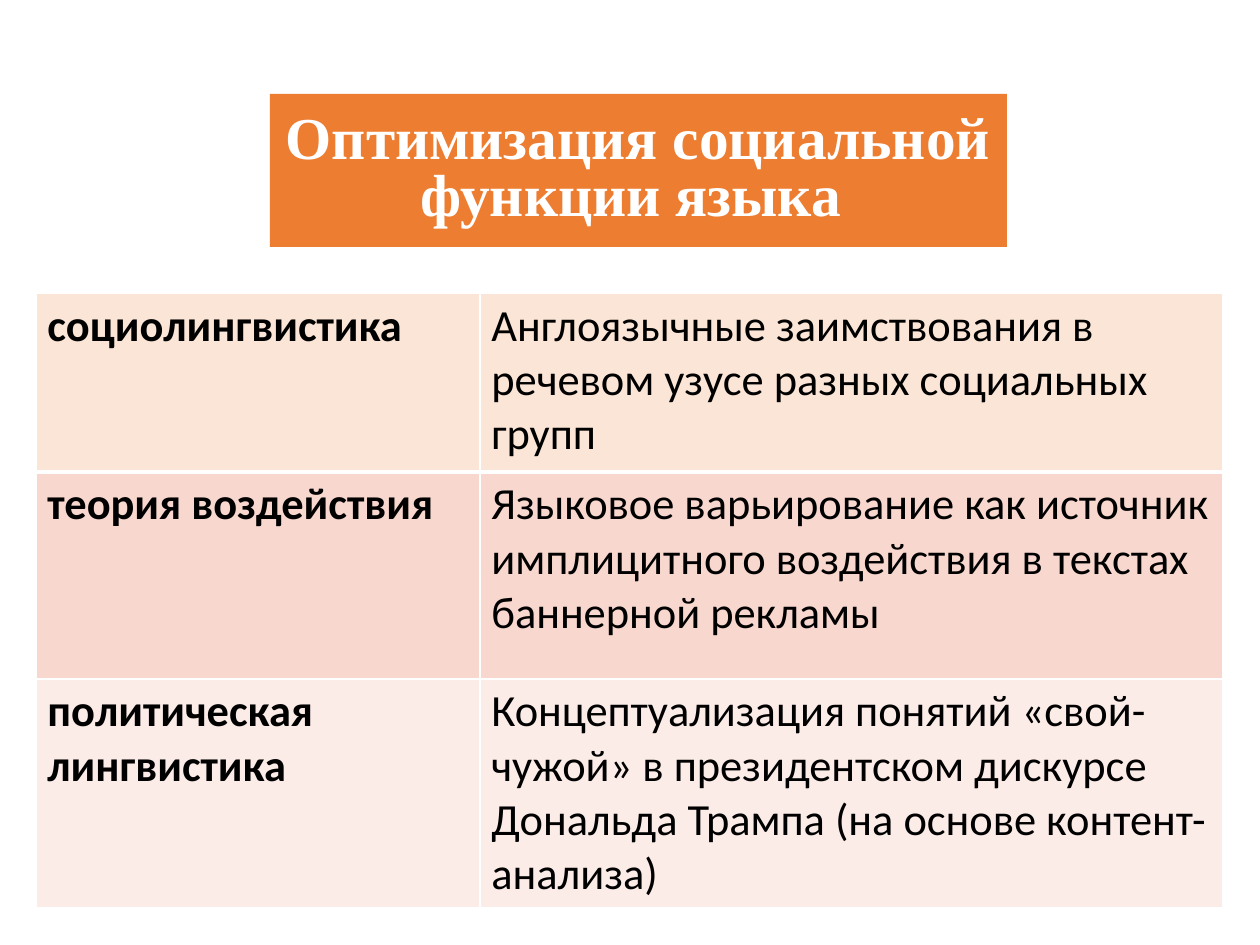
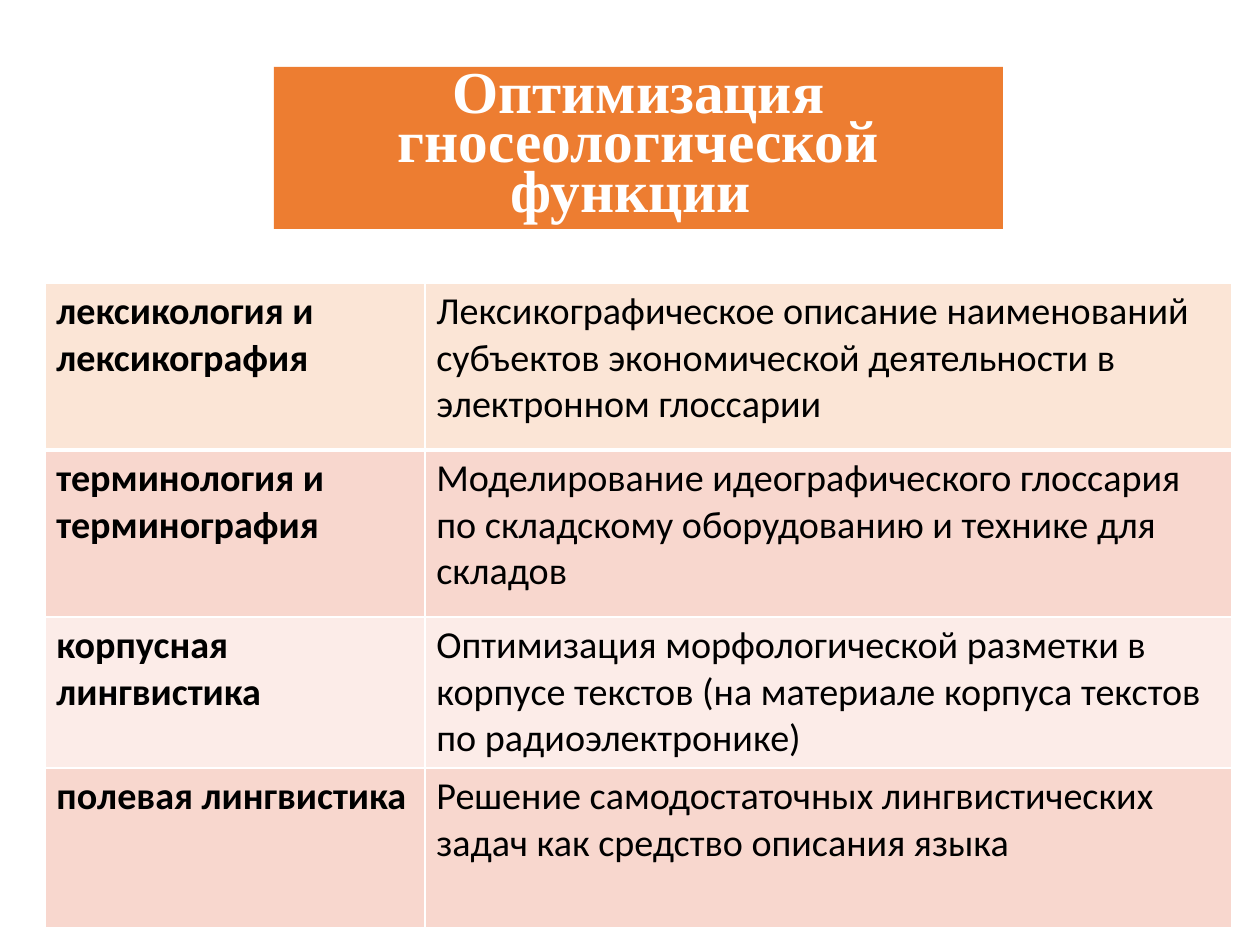
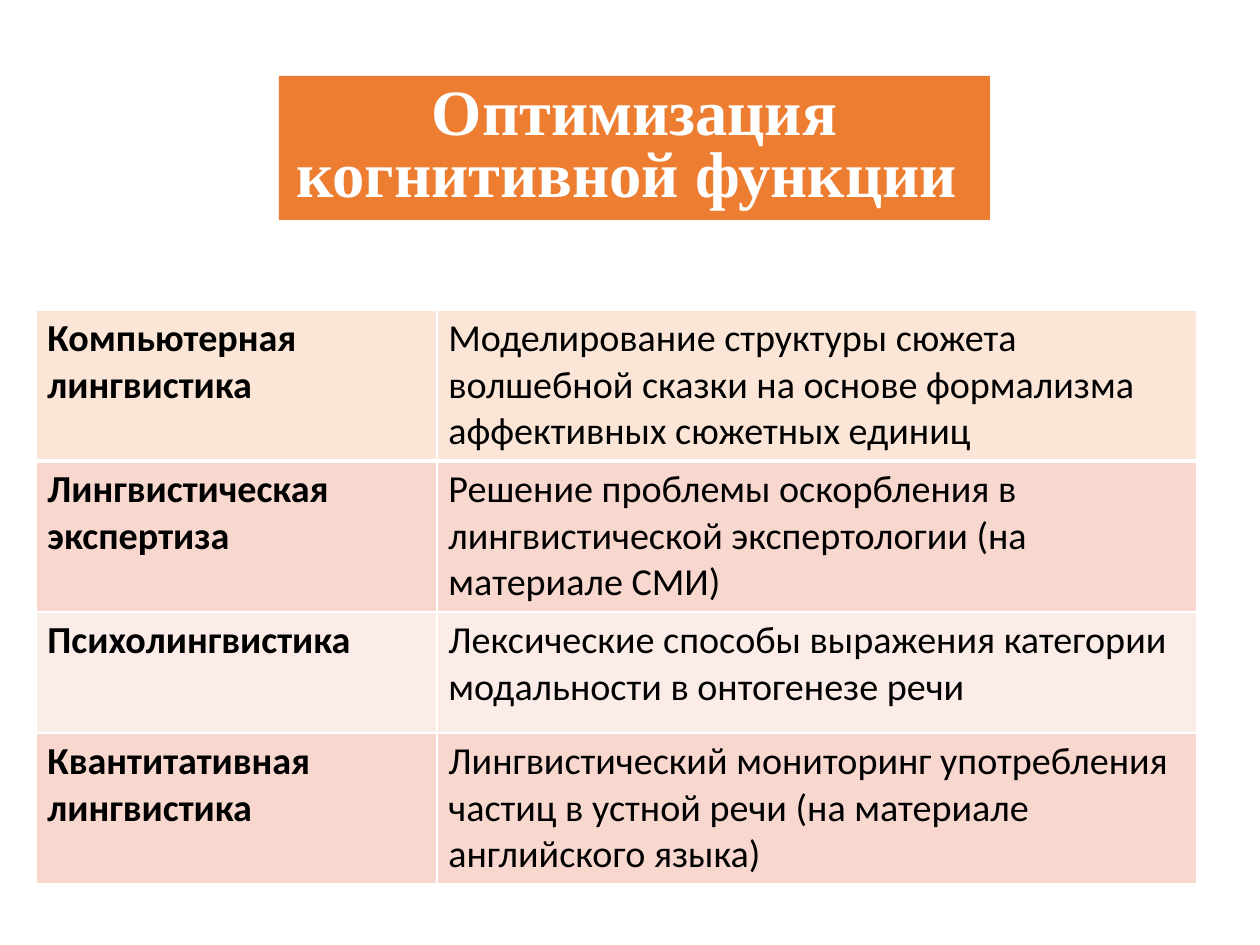
from dataclasses import dataclass

from lxml import etree
from pptx import Presentation
from pptx.dml.color import RGBColor
from pptx.enum.shapes import MSO_SHAPE
from pptx.enum.text import MSO_ANCHOR, PP_ALIGN
from pptx.oxml.ns import qn
from pptx.util import Pt

RECT = MSO_SHAPE.RECTANGLE
MIDDLE = MSO_ANCHOR.MIDDLE
LEFT, CENTER = PP_ALIGN.LEFT, PP_ALIGN.CENTER

# Shared scale, fonts and colours
PX = 8000  # EMU; 1260 by 945 px is 28 by 21 cm
SLIDE_W, SLIDE_H = 1260, 945
TITLE_FONT, BODY_FONT = "Times New Roman", "Calibri"
WHITE = RGBColor(0xFF, 0xFF, 0xFF)
BLACK = RGBColor(0x00, 0x00, 0x00)
ORANGE = RGBColor(0xED, 0x7D, 0x31)
PEACH = RGBColor(0xFB, 0xE5, 0xD6)
ROSE = RGBColor(0xF8, 0xD7, 0xCE)
PALE = RGBColor(0xFC, 0xEC, 0xE8)
THIN, THICK = 1, 3


@dataclass
class Box:
    left: int
    top: int
    width: int
    height: int

    def emu(self) -> list[int]:
        return [v * PX for v in (self.left, self.top, self.width, self.height)]


@dataclass
class Row:
    height: int
    field: str
    topic: str


@dataclass
class TopicSlide:
    title: str
    title_box: Box
    title_size: float
    title_spacing: float
    table_left: int
    table_top: int
    columns: tuple[int, int]
    text_size: int
    rows: list[Row]


SLIDES = [
    TopicSlide(
        "Оптимизация социальной функции языка ", Box(270, 94, 737, 153), 37.4, 0.8,
        36, 293, (444, 743), 28,
        [
            Row(179, "социолингвистика",
                "Англоязычные заимствования в речевом узусе разных социальных групп"),
            Row(207, "теория воздействия",
                "Языковое варьирование как источник имплицитного воздействия "
                "в текстах баннерной рекламы"),
            Row(207, "политическая лингвистика",
                "Концептуализация понятий «свой-чужой» в президентском дискурсе "
                "Дональда Трампа (на основе контент-анализа)"),
        ],
    ),
    TopicSlide(
        "Оптимизация гносеологической функции ", Box(274, 67, 729, 162), 37.4, 0.7,
        45, 283, (380, 807), 24,
        [
            Row(167, "лексикология и лексикография",
                "Лексикографическое описание наименований субъектов "
                "экономической деятельности в электронном глоссарии"),
            Row(167, "терминология и терминография",
                "Моделирование идеографического глоссария по складскому "
                "оборудованию и технике для складов"),
            Row(127, "корпусная лингвистика",
                "Оптимизация морфологической разметки в корпусе текстов "
                "(на материале корпуса текстов по радиоэлектронике)"),
            Row(160, "полевая лингвистика",
                "Решение самодостаточных лингвистических задач "
                "как средство описания языка"),
        ],
    ),
    TopicSlide(
        "Оптимизация когнитивной функции ", Box(279, 76, 711, 144), 40.7, 0.8,
        36, 310, (401, 760), 24,
        [
            Row(146, "Компьютерная лингвистика",
                "Моделирование структуры сюжета волшебной сказки "
                "на основе формализма аффективных сюжетных единиц"),
            Row(146, "Лингвистическая экспертиза",
                "Решение проблемы оскорбления в лингвистической экспертологии "
                "(на материале СМИ)"),
            Row(121, "Психолингвистика",
                "Лексические способы выражения категории модальности "
                "в онтогенезе речи"),
            Row(144, "Квантитативная лингвистика",
                "Лингвистический мониторинг употребления частиц в устной речи "
                "(на материале английского языка)"),
        ],
    ),
]


def write(tf, text: str, *, font: str, size: float, color: RGBColor,
          bold: bool = False, align=LEFT, spacing: float | None = None) -> None:
    tf.word_wrap = True
    p = tf.paragraphs[0]
    p.alignment = align
    if spacing is not None:
        p.line_spacing = spacing
    r = p.add_run()
    r.text = text
    r.font.name, r.font.size, r.font.bold = font, Pt(size), bold
    r.font.color.rgb = color


def set_borders(cell, top: int, bottom: int) -> None:
    tc_pr = cell._tc.get_or_add_tcPr()
    widths = {"a:lnL": THIN, "a:lnR": THIN, "a:lnT": top, "a:lnB": bottom}
    for i, (tag, width) in enumerate(widths.items()):
        ln = etree.Element(qn(tag), w=str(Pt(width)))
        fill = etree.SubElement(ln, qn("a:solidFill"))
        etree.SubElement(fill, qn("a:srgbClr"), val=str(WHITE))
        tc_pr.insert(i, ln)


def row_fill(index: int) -> RGBColor:
    if index == 0:
        return PEACH
    return ROSE if index % 2 else PALE


def add_title(s, topic: TopicSlide) -> None:
    sp = s.shapes.add_shape(RECT, *topic.title_box.emu())
    sp.shadow.inherit = False
    sp.fill.solid()
    sp.fill.fore_color.rgb = ORANGE
    sp.line.fill.background()
    sp.text_frame.vertical_anchor = MIDDLE
    write(sp.text_frame, topic.title, font=TITLE_FONT, size=topic.title_size,
          color=WHITE, bold=True, align=CENTER, spacing=topic.title_spacing)


def add_topics(s, topic: TopicSlide) -> None:
    box = Box(topic.table_left, topic.table_top, sum(topic.columns),
              sum(row.height for row in topic.rows))
    table = s.shapes.add_table(len(topic.rows), len(topic.columns), *box.emu()).table
    table.first_row = table.horz_banding = False
    for column, width in zip(table.columns, topic.columns):
        column.width = width * PX
    for i, row in enumerate(topic.rows):
        table.rows[i].height = row.height * PX
        for j, text in enumerate((row.field, row.topic)):
            cell = table.cell(i, j)
            cell.fill.solid()
            cell.fill.fore_color.rgb = row_fill(i)
            # The first row is set off by a thick rule
            set_borders(cell, top=THICK if i == 1 else THIN,
                        bottom=THICK if i == 0 else THIN)
            write(cell.text_frame, text, font=BODY_FONT, size=topic.text_size,
                  color=BLACK, bold=j == 0)


def main() -> None:
    prs = Presentation()
    prs.slide_width, prs.slide_height = SLIDE_W * PX, SLIDE_H * PX
    blank = prs.slide_layouts[6]
    for topic in SLIDES:
        s = prs.slides.add_slide(blank)
        add_title(s, topic)
        add_topics(s, topic)
    prs.save("out.pptx")


if __name__ == "__main__":
    main()
